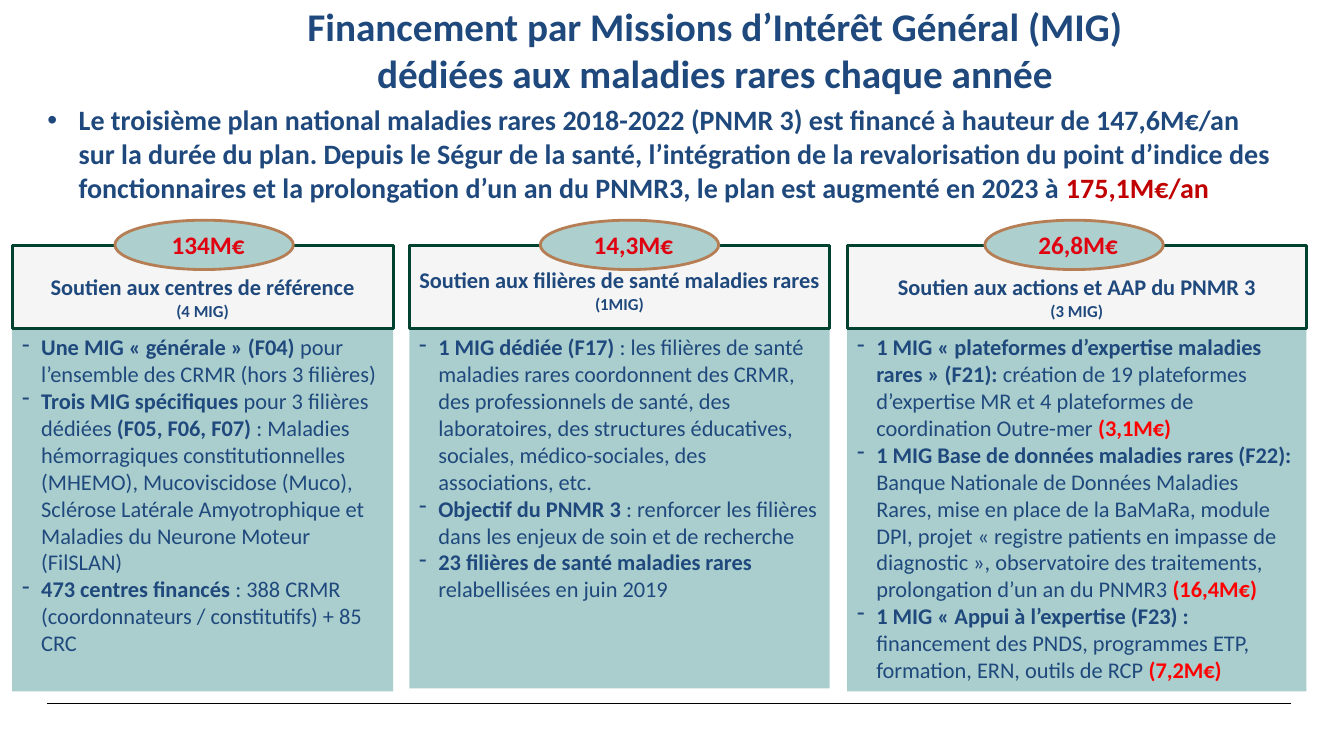
"""Slide on the yearly MIG funding dedicated to rare diseases."""
from lxml.etree import SubElement
from pptx import Presentation
from pptx.dml.color import RGBColor
from pptx.enum.shapes import MSO_CONNECTOR, MSO_SHAPE
from pptx.enum.text import MSO_ANCHOR as ANCHOR, MSO_AUTO_SIZE as AUTO, PP_ALIGN as ALIGN
from pptx.oxml.ns import qn
from pptx.util import Inches, Pt

COLORS = {
    "navy": "1F497D", "dark red": "C00000", "red": "FF0000", "amount": "E1000F",
    "teal": "AACECD", "oval": "ADCFCE", "bronze": "B67E54",
    "pale": "F5F5F5", "green": "004130", "black": "000000",
}
RGB = {name: RGBColor.from_string(value) for name, value in COLORS.items()}

deck = Presentation()
deck.slide_width, deck.slide_height = Inches(13.33), Inches(7.5)
col, row = deck.slide_width / 100, deck.slide_height / 100
slide = deck.slides.add_slide(deck.slide_layouts[1])


def panel(kind, x, y, w, h, fill, line=None):
    shape = slide.shapes.add_shape(kind, int(x * col), int(y * row), int(w * col), int(h * row))
    shape.shadow.inherit = False
    shape.fill.solid()
    shape.fill.fore_color.rgb = RGB[fill]
    if line:
        shape.line.color.rgb = RGB[line]
        shape.line.width = Pt(2)
    else:
        shape.line.fill.background()
    shape.text_frame.word_wrap = True
    return shape.text_frame


def write(frame, paragraphs, size, color="navy", align=ALIGN.CENTER, bullet=None, indent=0):
    for index, runs in enumerate(paragraphs):
        paragraph = frame.add_paragraph() if index else frame.paragraphs[0]
        if bullet:
            props = paragraph._p.get_or_add_pPr()
            props.set("marL", str(Inches(indent)))
            props.set("indent", str(-Inches(indent)))
            SubElement(props, qn("a:buChar")).set("char", bullet)
        paragraph.alignment = align
        paragraph.space_before = Pt(0)
        font = paragraph.font
        font.name, font.size, font.bold = "Calibri", Pt(size), True
        font.color.rgb = RGB[color]
        for words, style in runs:
            run = paragraph.add_run()
            run.text = words
            if style == "plain":
                run.font.bold = False
            elif style:
                run.font.color.rgb = RGB[style]


title, plan = slide.shapes.title, slide.placeholders[1]
for holder, (x, y, w, h) in ((title, (20.93, -0.4, 64.5, 13.87)),
                             (plan, (2.78, 12.93, 93.08, 22.93))):
    holder.left, holder.top = int(x * col), int(y * row)
    holder.width, holder.height = int(w * col), int(h * row)
    holder.text_frame.auto_size = AUTO.NONE
    holder.text_frame.vertical_anchor = ANCHOR.TOP

write(title.text_frame, [[(
    "Financement par Missions d’Intérêt Général (MIG) "
    "dédiées aux maladies rares chaque année", None)]], 28)
write(plan.text_frame, [[(
    "Le troisième plan national maladies rares 2018-2022 (PNMR 3) est financé à hauteur de "
    "147,6M€/an sur la durée du plan. Depuis le Ségur de la santé, l’intégration de la "
    "revalorisation du point d’indice des fonctionnaires et la prolongation d’un an du PNMR3, "
    "le plan est augmenté en 2023 à ", None), ("175,1M€/an", "dark red")]],
    20, align=ALIGN.LEFT, bullet="•", indent=0.31)

centres = [
    [("Une MIG « générale » (F04) ", None),
     ("pour l’ensemble des CRMR (hors 3 filières)", "plain")],
    [("Trois MIG spécifiques ", None), ("pour 3 filières dédiées ", "plain"),
     ("(F05, F06, F07) ", None),
     (": Maladies hémorragiques constitutionnelles (MHEMO), Mucoviscidose (Muco), Sclérose "
      "Latérale Amyotrophique et Maladies du Neurone Moteur (FilSLAN)", "plain")],
    [("473 centres financés ", None),
     (": 388 CRMR (coordonnateurs / constitutifs) + 85 CRC", "plain")],
]
networks = [
    [("1 MIG dédiée (F17) ", None),
     (": les filières de santé maladies rares coordonnent des CRMR, des professionnels de "
      "santé, des laboratoires, des structures éducatives, sociales, médico-sociales, des "
      "associations, etc.", "plain")],
    [("Objectif du PNMR 3", None),
     (" : renforcer les filières dans les enjeux de soin et de recherche", "plain")],
    [("23 filières de santé maladies rares ", None),
     ("relabellisées en juin 2019", "plain")],
]
actions = [
    [("1 MIG « plateformes d’expertise maladies rares » (F21): ", None),
     ("création de 19 plateformes d’expertise MR et 4 plateformes de coordination "
      "Outre-mer ", "plain"), ("(3,1M€)", "red")],
    [("1 MIG Base de données maladies rares (F22): ", None),
     ("Banque Nationale de Données Maladies Rares, mise en place de la BaMaRa, module DPI, "
      "projet « registre patients en impasse de diagnostic », observatoire des traitements, "
      "prolongation d’un an du PNMR3 ", "plain"), ("(16,4M€)", "red")],
    [("1 MIG « Appui à l’expertise (F23) : ", None),
     ("financement des PNDS, programmes ETP, formation, ERN, outils de RCP ", "plain"),
     ("(7,2M€)", "red")],
]

missions = [
    (0.9, 28.35, 48, 8.55, 0.08, "134M€", "Soutien aux centres de référence", "(4 MIG)", centres),
    (30.45, 31.28, 47.6, 40.2, 0.15, "14,3M€", "Soutien aux filières de santé maladies rares",
     "(1MIG)", networks),
    (63.04, 34.16, 48, 73.28, 0.08, "26,8M€", "Soutien aux actions et AAP du PNMR 3",
     "(3 MIG)", actions),
]
for x, width, depth, oval_x, lift, amount, support, count, details in missions:
    detail = panel(MSO_SHAPE.RECTANGLE, x, 43.47, width, depth, "teal")
    detail.vertical_anchor = ANCHOR.TOP
    write(detail, details, 16, align=ALIGN.LEFT, bullet="-", indent=0.19)

    heading = panel(MSO_SHAPE.RECTANGLE, x, 32.53, width, 10.93, "pale", "green")
    heading.vertical_anchor = ANCHOR.BOTTOM
    heading.margin_left = heading.margin_right = Inches(0.05)
    heading.margin_bottom = Inches(lift)
    write(heading, [[(support, None)], [(count, None)]], 16)
    heading.paragraphs[1].font.size = Pt(12)

    budget = panel(MSO_SHAPE.OVAL, oval_x, 29.13, 13.28, 6.53, "oval", "bronze")
    budget.vertical_anchor = ANCHOR.MIDDLE
    budget.margin_left = Inches(0.08)
    budget.margin_right = budget.margin_top = budget.margin_bottom = 0
    write(budget, [[(amount, None)]], 18, "amount")

for start, end in ((3.53, 95.7), (3.9, 96.08)):
    rule = slide.shapes.add_connector(
        MSO_CONNECTOR.STRAIGHT, int(start * col), int(93.07 * row), int(end * col), int(93.07 * row))
    rule.line.color.rgb = RGB["black"]
    rule.line.width = Pt(0.8)
    SubElement(rule._element.spPr, qn("a:effectLst"))

deck.save("out.pptx")
